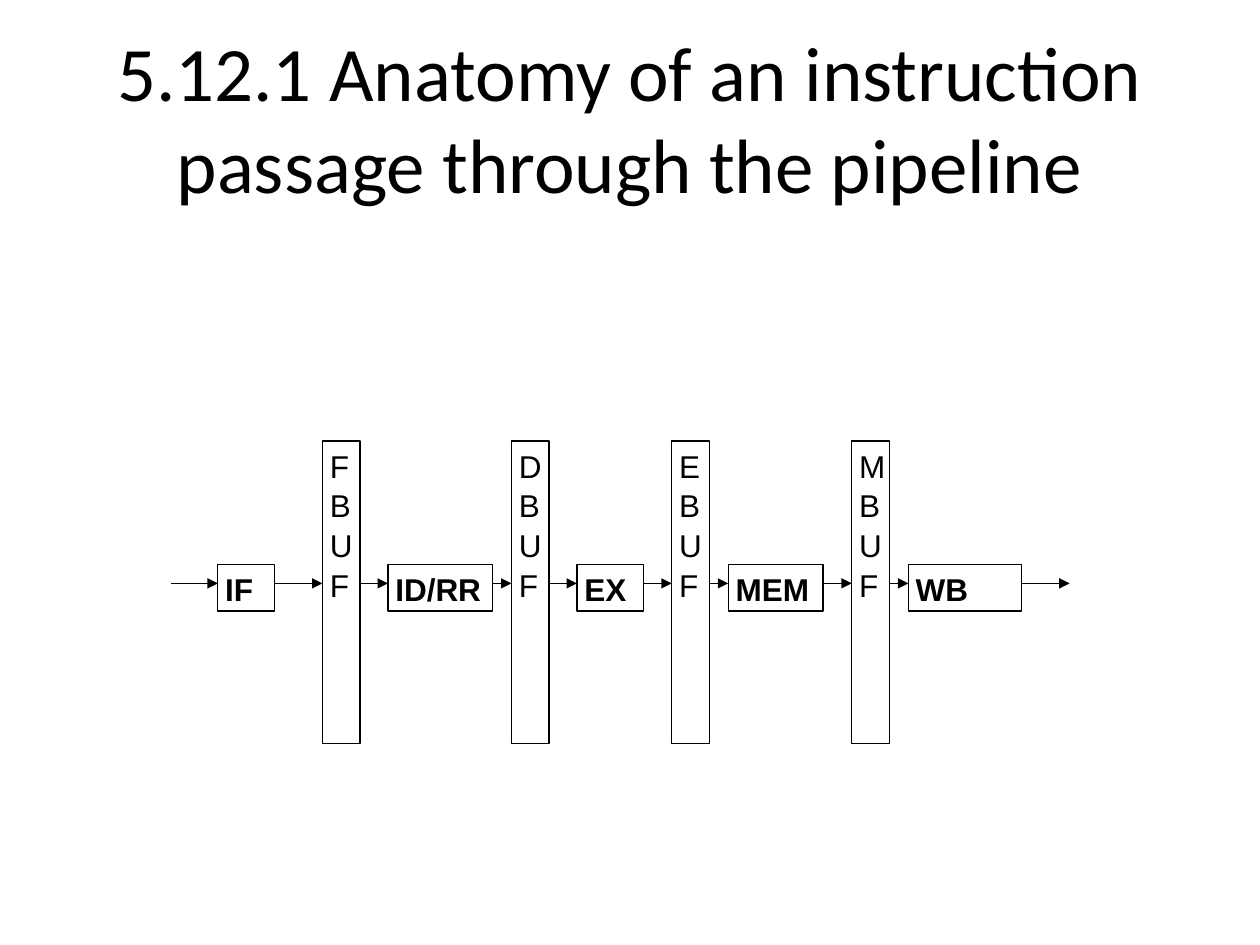
from pptx import Presentation
from pptx.util import Cm, Pt
from pptx.dml.color import RGBColor
from pptx.enum.shapes import MSO_CONNECTOR, MSO_SHAPE
from pptx.enum.text import MSO_ANCHOR, PP_ALIGN
from lxml.etree import SubElement
from pptx.oxml.ns import qn

COLORS = {"ink": "000000"}
INK = RGBColor.from_string(COLORS["ink"])


def style(frame, font, size, align, bold=False):
    frame.word_wrap = True
    for para in frame.paragraphs:
        para.alignment = align
        for run in para.runs:
            run.font.name = font
            run.font.size = Pt(size)
            run.font.bold = bold
            run.font.color.rgb = INK


def arrow(start, end, y):
    line = slide.shapes.add_connector(
        MSO_CONNECTOR.STRAIGHT, Cm(start), Cm(y), Cm(end), Cm(y))
    line.line.color.rgb = INK
    line.line.width = Pt(0.75)
    SubElement(line.line._get_or_add_ln(), qn("a:tailEnd"), type="triangle")
    SubElement(line._element.spPr, qn("a:effectLst"))


deck = Presentation()
deck.slide_width, deck.slide_height = Cm(25.4), Cm(19.05)
slide = deck.slides.add_slide(deck.slide_layouts[6])

# Title
title = slide.shapes.add_textbox(Cm(1.27), Cm(0.76), Cm(22.86), Cm(3.18))
title.text_frame.text = "5.12.1 Anatomy of an instruction passage through the pipeline"
title.text_frame.vertical_anchor = MSO_ANCHOR.MIDDLE
style(title.text_frame, "Calibri", 44, PP_ALIGN.CENTER)

# Pipeline parts in order of flow: text, left, width, is a stage
BUF = 0.76
parts = [
    ("IF", 4.39, 1.14, True),
    ("FBUF", 6.5, BUF, False),
    ("ID/RR", 7.82, 2.11, True),
    ("DB\nU\nF", 10.31, BUF, False),
    ("EX", 11.63, 1.34, True),
    ("EB\nU\nF", 13.54, BUF, False),
    ("MEM", 14.68, 1.91, True),
    ("MB\nU\nF", 17.17, BUF, False),
    ("WB", 18.31, 2.29, True),
]

# Stages and tall buffers
for text, left, width, stage in parts:
    top, height = (11.38, 0.94) if stage else (8.89, 6.1)
    box = slide.shapes.add_shape(
        MSO_SHAPE.RECTANGLE, Cm(left), Cm(top), Cm(width), Cm(height))
    box.shadow.inherit = False
    box.fill.background()
    box.line.color.rgb = INK
    box.line.width = Pt(0.75)
    frame = box.text_frame
    frame.text = text
    frame.vertical_anchor = MSO_ANCHOR.TOP
    frame.margin_left = frame.margin_right = Cm(0.15)
    frame.margin_top = frame.margin_bottom = Cm(0.08)
    style(frame, "Arial", 18, PP_ALIGN.LEFT, stage)
    for para in frame.paragraphs:
        para.line_spacing = 1.05

# Arrows across each gap, plus one in and one out
starts = [3.45] + [left + width for _, left, width, _ in parts]
ends = [left for _, left, _, _ in parts] + [21.56]
for start, end in zip(starts, ends):
    arrow(start, end, 11.76)

deck.save("out.pptx")
